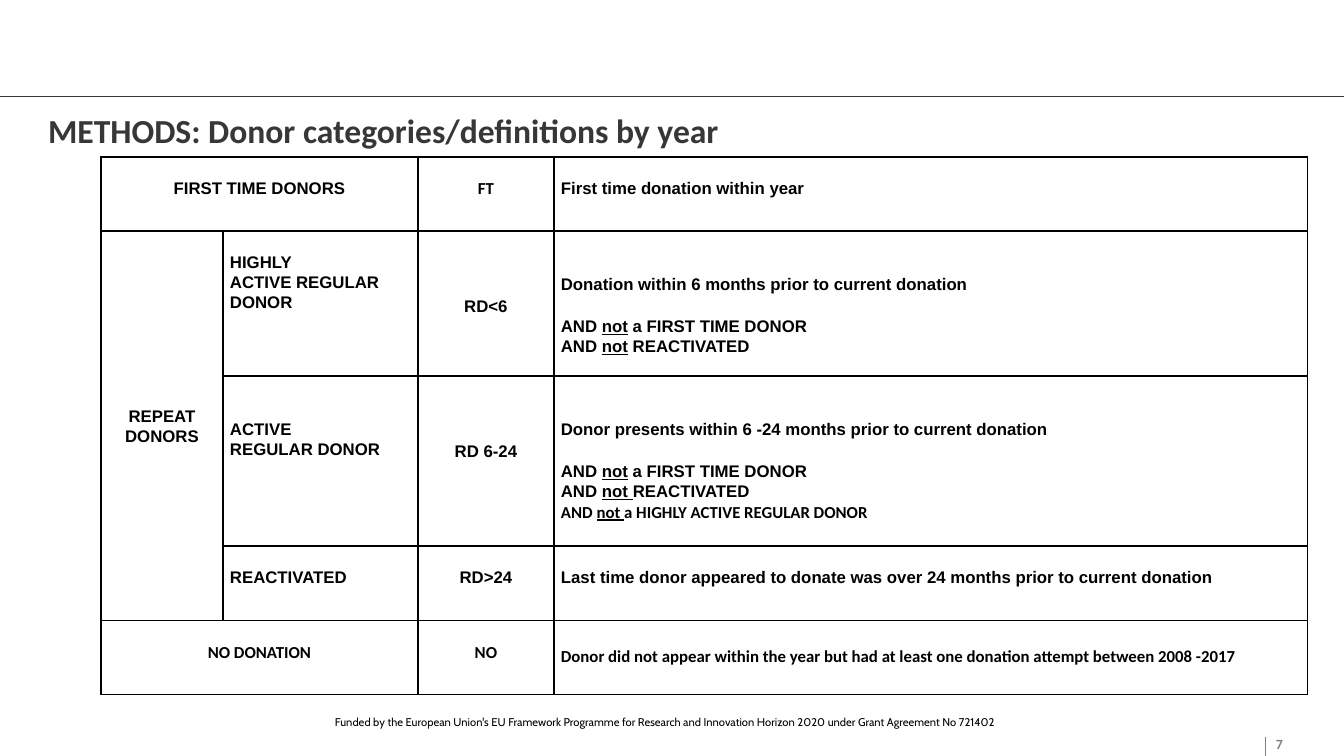
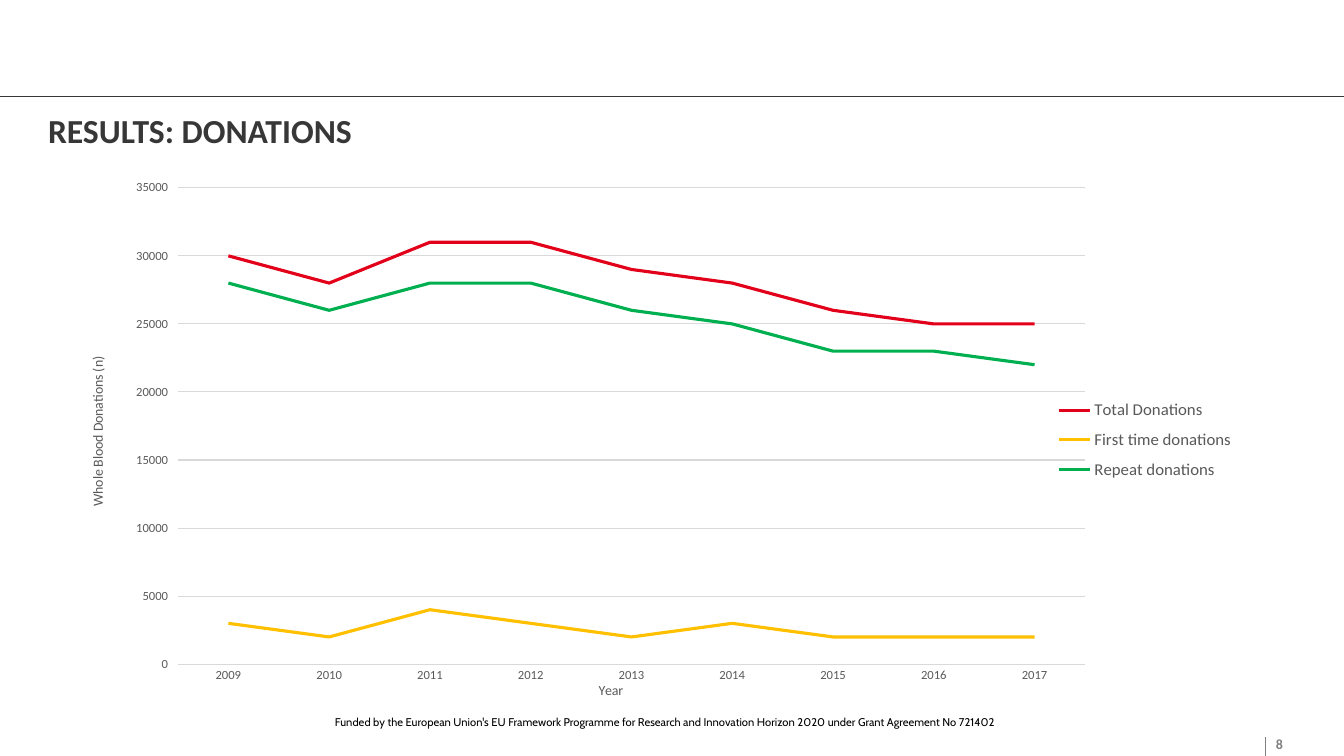
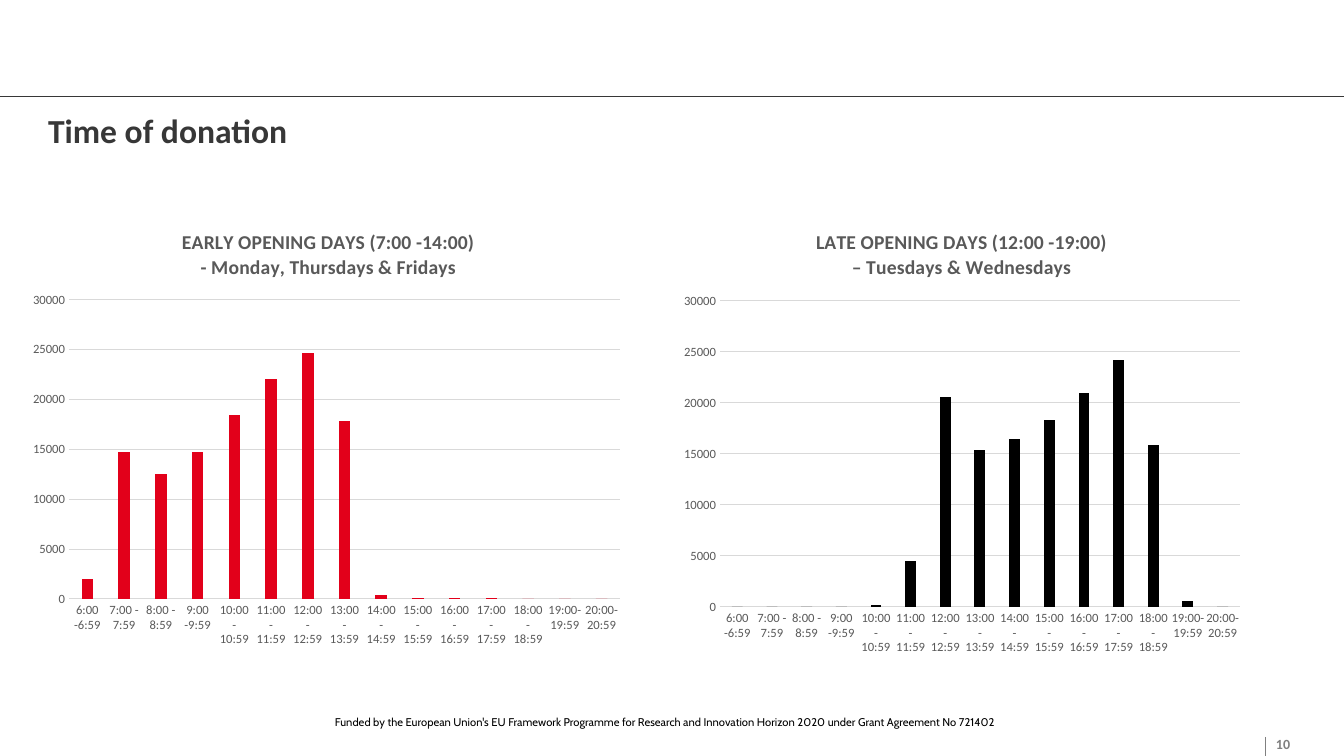
"""Build three slides on blood donor categories, donations and donation times."""
import pptx
import pptx.chart.data
import pptx.dml.color
import pptx.enum.chart
import pptx.enum.shapes
import pptx.enum.text
import pptx.oxml
import pptx.oxml.ns
import pptx.util
from lxml import etree

PX = 914400 / 100.8
DARK, GREY, BLACK, RED = "373737", "808080", "000000", "E2001A"
AXIS_TEXT, GRID = "595959", "D9D9D9"
FUNDING = ("Funded by the European Union's EU Framework Programme for Research and "
           "Innovation Horizon 2020 under Grant Agreement No 721402")
LEFT, CENTER = pptx.enum.text.PP_ALIGN.LEFT, pptx.enum.text.PP_ALIGN.CENTER
TOP, MIDDLE = pptx.enum.text.MSO_ANCHOR.TOP, pptx.enum.text.MSO_ANCHOR.MIDDLE
TICK = pptx.enum.chart.XL_TICK_MARK
BLANK_LINE = 22

DEFINITIONS = [
    (0, 0, ["FIRST TIME DONORS"], 1, "Arial"),
    (0, 2, ["FT"], 0.95, "Calibri"),
    (0, 3, ["First time donation within year"], 1, "Arial"),
    (1, 0, ["REPEAT DONORS"], 0, "Arial"),
    (1, 1, ["HIGHLY", "ACTIVE REGULAR DONOR"], 1, "Arial"),
    (1, 2, ["RD<6"], 3, "Arial"),
    (1, 3, ["Donation within 6 months prior to current donation",
            "AND _not_ a FIRST TIME DONOR", "AND _not_ REACTIVATED"], 2, "Arial"),
    (2, 1, ["ACTIVE", "REGULAR DONOR"], 2, "Arial"),
    (2, 2, ["RD 6-24"], 3, "Arial"),
    (2, 3, ["Donor presents within 6 -24 months prior to current donation",
            "AND _not_ a FIRST TIME DONOR", "AND _not _REACTIVATED",
            "AND _not _a HIGHLY ACTIVE REGULAR DONOR"], 2, "Arial"),
    (3, 1, ["REACTIVATED"], 1, "Arial"),
    (3, 2, ["RD>24"], 1, "Arial"),
    (3, 3, ["Last time donor appeared to donate was over 24 months prior to "
            "current donation"], 1, "Arial"),
    (4, 0, ["NO DONATION"], 0.95, "Calibri"),
    (4, 2, ["NO"], 0.95, "Calibri"),
    (4, 3, ["Donor did not appear within the year but had at least one donation "
            "attempt between 2008 -2017"], 1.15, "Calibri"),
]

DONATIONS = [
    ("Total Donations", RED,
     [30000, 28000, 31000, 31000, 29000, 28000, 26000, 25000, 25000]),
    ("First time donations", "FFC000",
     [3000, 2000, 4000, 3000, 2000, 3000, 2000, 2000, 2000]),
    ("Repeat donations", "00B050",
     [28000, 26000, 28000, 28000, 26000, 25000, 23000, 23000, 22000]),
]

HOURS = (["6:00 -6:59", "7:00 - 7:59", "8:00 - 8:59", "9:00 -9:59"]
         + [f"{h}:00 - {h}:59" for h in range(10, 19)]
         + ["19:00-19:59", "20:00-20:59"])
EARLY = [2000, 14700, 12500, 14700, 18500, 22100, 24700, 17900, 400, 100, 100, 100,
         0, 0, 0]
LATE = [0, 0, 0, 0, 200, 4500, 20600, 15400, 16500, 18300, 21000, 24200, 15900, 600, 0]


def px(n):
    """Turn px into EMU."""
    return pptx.util.Emu(round(n * PX))


def rgb(color):
    """Turn a hex string into a colour."""
    return pptx.dml.color.RGBColor.from_string(color)


def set_font(font, size, color, name="Calibri", bold=False):
    """Set the look of a font."""
    font.size, font.name, font.bold = pptx.util.Pt(size), name, bold
    font.color.rgb = rgb(color)


def set_margins(tf, top=0):
    """Clear the insets of a text frame, but for the top one."""
    tf.margin_left = tf.margin_right = tf.margin_bottom = 0
    tf.margin_top = px(top)
    tf.word_wrap = True


def add_text(slide, box, text, size, color, name="Calibri", bold=False):
    """Add a one-paragraph text box."""
    tf = slide.shapes.add_textbox(*map(px, box)).text_frame
    set_margins(tf)
    p = tf.paragraphs[0]
    p.text = text
    set_font(p.font, size, color, name, bold)


def add_line(slide, x1, y1, x2, y2, color, width):
    """Add a straight line without shadow."""
    c = slide.shapes.add_connector(pptx.enum.shapes.MSO_CONNECTOR.STRAIGHT,
                                   px(x1), px(y1), px(x2), px(y2))
    c.line.color.rgb, c.line.width = rgb(color), pptx.util.Pt(width)
    etree.SubElement(c.element.spPr, pptx.oxml.ns.qn("a:effectLst"))


def new_slide(prs, title, number):
    """Add a slide with its title, rules, funding line and number."""
    slide = prs.slides.add_slide(prs.slide_layouts[5])
    add_line(slide, 0, 96, 1344, 96, DARK, 0.25)
    add_line(slide, 1266, 737, 1266, 756, GREY, 0.75)
    add_text(slide, (1276, 736, 30, 20), str(number), 10, GREY, bold=True)
    add_text(slide, (335, 715, 674, 19), FUNDING, 8, BLACK, "Cabin")
    sp = slide.shapes.title
    sp.left, sp.top, sp.width, sp.height = map(px, (48, 98, 1249, 55))
    tf = sp.text_frame
    set_margins(tf, 10)
    tf.auto_size = pptx.enum.text.MSO_AUTO_SIZE.NONE
    tf.vertical_anchor = MIDDLE
    p = tf.paragraphs[0]
    p.text, p.alignment = title, LEFT
    set_font(p.font, 24, DARK, bold=True)
    return slide


def set_borders(cell):
    """Draw a black border of one point on each side of a cell."""
    tc_pr = cell._tc.get_or_add_tcPr()
    for i, side in enumerate(("lnL", "lnR", "lnT", "lnB")):
        tc_pr.insert(i, pptx.oxml.parse_xml(
            f'<a:{side} {pptx.oxml.ns.nsdecls("a")} w="12700"><a:solidFill>'
            f'<a:srgbClr val="{BLACK}"/></a:solidFill></a:{side}>'))


def fill_cell(cell, lines, lead, font, align):
    """Write lines into a cell, lead blank lines down; _ marks underlining."""
    cell.margin_top = px(max(0, round(lead * BLANK_LINE) - 1))
    tf = cell.text_frame
    for i, line in enumerate(lines):
        p = tf.add_paragraph() if i else tf.paragraphs[0]
        p.alignment, p.line_spacing = align, 1.07
        if i == 1 and "_" in line:
            p.space_before = pptx.util.Pt(15.5)
        name = "Calibri" if "HIGHLY ACTIVE" in line else font
        set_font(p.font, 12, BLACK, name, True)
        for j, part in enumerate(line.split("_")):
            r = p.add_run()
            r.text = part
            if j % 2:
                r.font.underline = True


def add_definitions(slide):
    """Add the table of donor categories."""
    cols, rows = (122, 195, 136, 754), (74, 145, 170, 75, 74)
    table = slide.shapes.add_table(len(rows), len(cols), px(101), px(157),
                                   px(sum(cols)), px(sum(rows))).table
    table.first_row = table.horz_banding = False
    for col, width in zip(table.columns, cols):
        col.width = px(width)
    for row, height in zip(table.rows, rows):
        row.height = px(height)
    for cell in table.iter_cells():
        cell.fill.background()
        cell.margin_left = cell.margin_right = px(7)
        cell.margin_top = cell.margin_bottom = 0
        set_borders(cell)
    for first, last in (((0, 0), (0, 1)), ((1, 0), (3, 0)), ((4, 0), (4, 1))):
        table.cell(*first).merge(table.cell(*last))
    for row, col, lines, lead, font in DEFINITIONS:
        cell = table.cell(row, col)
        cell.vertical_anchor = TOP if lead else MIDDLE
        fill_cell(cell, lines, lead, font, CENTER if col in (0, 2) else LEFT)


def place(chart, frame, target, box, inner=False):
    """Place a part of a chart, by its path, at a box given on the slide."""
    part = chart.element.xpath(target)[0]
    for old in part.xpath("c:layout"):
        part.remove(old)
    sizes = [box[0] - frame[0], box[1] - frame[1], *box[2:]]
    scale = [frame[2], frame[3]] * 2
    tags = "".join(f'<c:{k} val="{v / s:.4f}"/>' for k, v, s in zip("xywh", sizes, scale))
    layer = '<c:layoutTarget val="inner"/>' if inner else ""
    layout = pptx.oxml.parse_xml(
        f'<c:layout {pptx.oxml.ns.nsdecls("c")}><c:manualLayout>{layer}'
        f'<c:xMode val="edge"/><c:yMode val="edge"/>{tags}</c:manualLayout></c:layout>')
    overlay = part.xpath("c:overlay")
    if overlay:
        overlay[0].addprevious(layout)
    else:
        part.insert(0, layout)


def set_title(owner, lines, size, bold=False):
    """Give a chart or an axis a title."""
    owner.has_title = True
    tf = (owner.chart_title if hasattr(owner, "chart_title") else owner.axis_title).text_frame
    for i, line in enumerate(lines):
        p = tf.add_paragraph() if i else tf.paragraphs[0]
        p.text = line
        set_font(p.font, size, AXIS_TEXT, bold=bold)


def add_chart(slide, kind, frame, plot_box, cats, series, top):
    """Add a chart with grey axes and a fixed plot area."""
    data = pptx.chart.data.CategoryChartData()
    data.categories = cats
    for name, _, values in series:
        data.add_series(name, values)
    chart = slide.shapes.add_chart(kind, *map(px, frame), data).chart
    set_font(chart.font, 10, BLACK)
    chart.has_title = chart.has_legend = False
    plot = chart.plots[0]
    plot.vary_by_categories = False
    cat, val = chart.category_axis, chart.value_axis
    for axis in (cat, val):
        axis.major_tick_mark = axis.minor_tick_mark = TICK.NONE
        set_font(axis.tick_labels.font, 9, AXIS_TEXT)
    val.minimum_scale, val.maximum_scale, val.major_unit = 0, top, 5000
    val.has_major_gridlines = True
    val.format.line.fill.background()
    for line in (cat.format.line, val.major_gridlines.format.line):
        line.color.rgb, line.width = rgb(GRID), pptx.util.Pt(0.75)
    place(chart, frame, "c:chart/c:plotArea", plot_box, True)
    return chart


def add_donations(slide):
    """Add the line chart of donations by year."""
    frame = (69, 171, 1198, 532)
    chart = add_chart(slide, pptx.enum.chart.XL_CHART_TYPE.LINE, frame,
                      (178, 188, 907, 482), [str(y) for y in range(2009, 2018)],
                      DONATIONS, 35000)
    for s, (_, color, _) in zip(chart.plots[0].series, DONATIONS):
        s.smooth = False
        s.format.line.color.rgb, s.format.line.width = rgb(color), pptx.util.Pt(2.25)
    chart.value_axis.major_tick_mark = TICK.OUTSIDE
    set_title(chart.category_axis, ["Year"], 10)
    set_title(chart.value_axis, ["Whole Blood Donations (n)"], 10)
    chart.element.xpath(".//c:valAx/c:title//a:bodyPr")[0].set("rot", "-5400000")
    place(chart, frame, ".//c:catAx/c:title", (596, 685))
    place(chart, frame, ".//c:valAx/c:title", (86, 358))
    chart.has_legend = True
    chart.legend.position = pptx.enum.chart.XL_LEGEND_POSITION.RIGHT
    chart.legend.include_in_layout = False
    set_font(chart.legend.font, 12, AXIS_TEXT)
    place(chart, frame, "c:chart/c:legend", (1055, 393, 180, 100))


def add_hours(slide, frame, plot_box, title, title_at, values, color):
    """Add a column chart of donations by hour."""
    chart = add_chart(slide, pptx.enum.chart.XL_CHART_TYPE.COLUMN_CLUSTERED, frame,
                      plot_box, HOURS, [("Series 1", color, values)], 30000)
    plot = chart.plots[0]
    plot.gap_width, plot.overlap = 219, -27
    fill = plot.series[0].format.fill
    fill.solid()
    fill.fore_color.rgb = rgb(color)
    set_title(chart, title, 14, True)
    place(chart, frame, "c:chart/c:title", title_at)


def main():
    """Build and save the slides."""
    prs = pptx.Presentation()
    prs.slide_width, prs.slide_height = px(1344), px(756)
    add_definitions(new_slide(prs, "METHODS: Donor categories/definitions by year", 7))
    add_donations(new_slide(prs, "RESULTS: DONATIONS", 8))
    slide = new_slide(prs, "Time of donation", 10)
    add_hours(slide, (672, 212, 580, 453), (720, 301, 520, 306),
              ["LATE OPENING DAYS (12:00 -19:00)", "– Tuesdays & Wednesdays"],
              (813, 226), LATE, BLACK)
    add_hours(slide, (21, 212, 611, 445), (69, 300, 551, 299),
              ["EARLY OPENING DAYS (7:00 -14:00)", "- Monday, Thursdays & Fridays"],
              (179, 226), EARLY, RED)
    prs.save("out.pptx")


if __name__ == "__main__":
    main()
